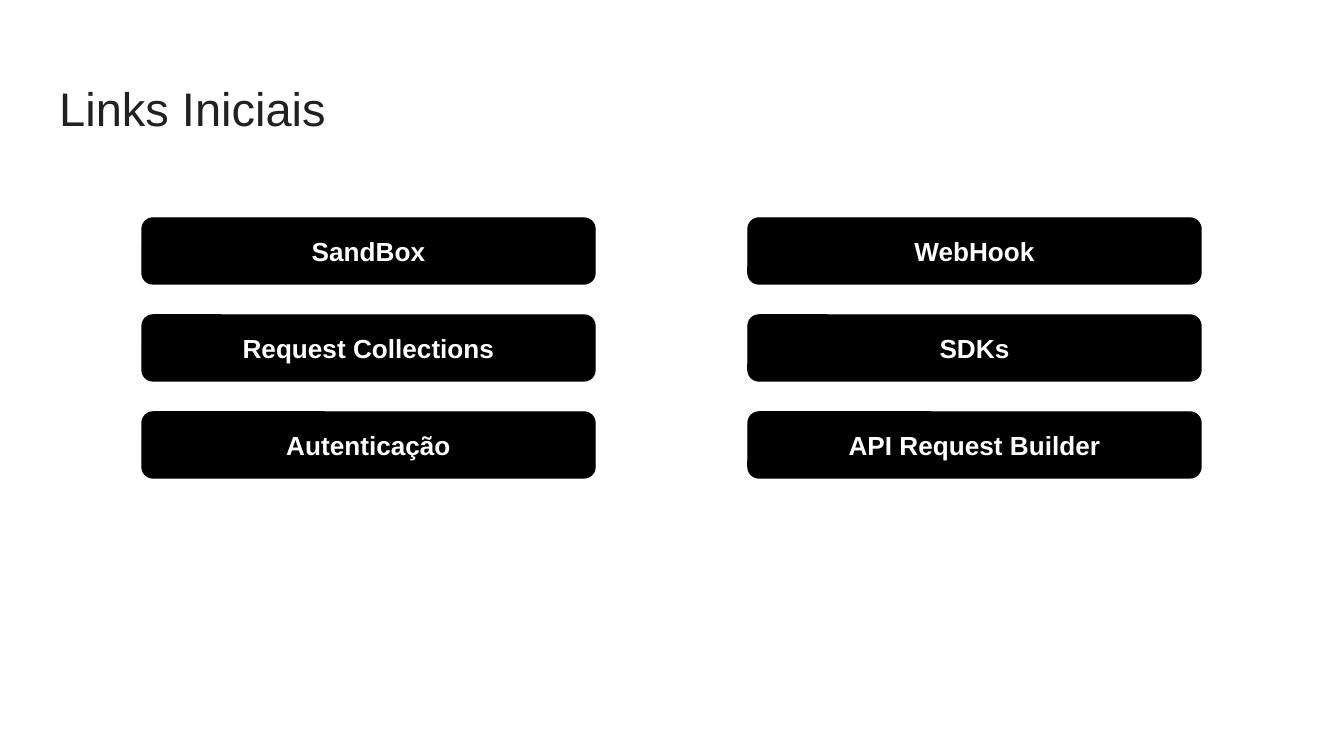
import pptx
import pptx.dml.color
import pptx.enum.shapes
import pptx.enum.text
import pptx.util

PX = 914400 / 134.4
FONT = "Arial"
BUTTON_W, BUTTON_H = 453, 66
COLUMN_PITCH, ROW_PITCH = 606, 97
LINK_COLUMNS = [
    ["SandBox", "Request Collections", "Autenticação"],
    ["WebHook", "SDKs", "API Request Builder"],
]


def px(length):
    return pptx.util.Emu(round(length * PX))


def color(hex_value):
    return pptx.dml.color.RGBColor.from_string(hex_value)


def write(shape, text, size, hex_value, anchor, align, bold=False):
    frame = shape.text_frame
    frame.word_wrap = True
    frame.vertical_anchor = anchor
    frame.margin_left = frame.margin_right = pptx.util.Inches(0.1)
    frame.margin_top = frame.margin_bottom = pptx.util.Inches(0.1)
    line = frame.paragraphs[0]
    line.text = text
    line.alignment = align
    line.font.name = FONT
    line.font.size = pptx.util.Pt(size)
    line.font.bold = bold
    line.font.color.rgb = color(hex_value)


def add_heading(slide, left, top, width, height):
    heading = slide.shapes.add_textbox(px(left), px(top), px(width), px(height))
    write(heading, "Links Iniciais", 25.2, "212121",
          pptx.enum.text.MSO_ANCHOR.TOP, pptx.enum.text.PP_ALIGN.LEFT)


def add_button(slide, label, left, top):
    button = slide.shapes.add_shape(
        pptx.enum.shapes.MSO_SHAPE.ROUNDED_RECTANGLE,
        px(left), px(top), px(BUTTON_W), px(BUTTON_H))
    button.shadow.inherit = False
    button.fill.solid()
    button.fill.fore_color.rgb = color("000000")
    button.line.color.rgb = color("000000")
    button.line.width = pptx.util.Pt(0.75)
    write(button, label, 14, "FFFFFF", pptx.enum.text.MSO_ANCHOR.MIDDLE,
          pptx.enum.text.PP_ALIGN.CENTER, bold=True)


def add_link_grid(slide, left, top):
    for column, labels in enumerate(LINK_COLUMNS):
        for row, label in enumerate(labels):
            add_button(slide, label,
                       left + column * COLUMN_PITCH, top + row * ROW_PITCH)


def main():
    deck = pptx.Presentation()
    deck.slide_width, deck.slide_height = px(1344), px(756)
    slide = deck.slides.add_slide(deck.slide_layouts[6])
    slide.background.fill.solid()
    slide.background.fill.fore_color.rgb = color("FFFFFF")
    add_heading(slide, 46, 66, 1252, 85)
    add_link_grid(slide, 142, 218)
    deck.save("out.pptx")


if __name__ == "__main__":
    main()
